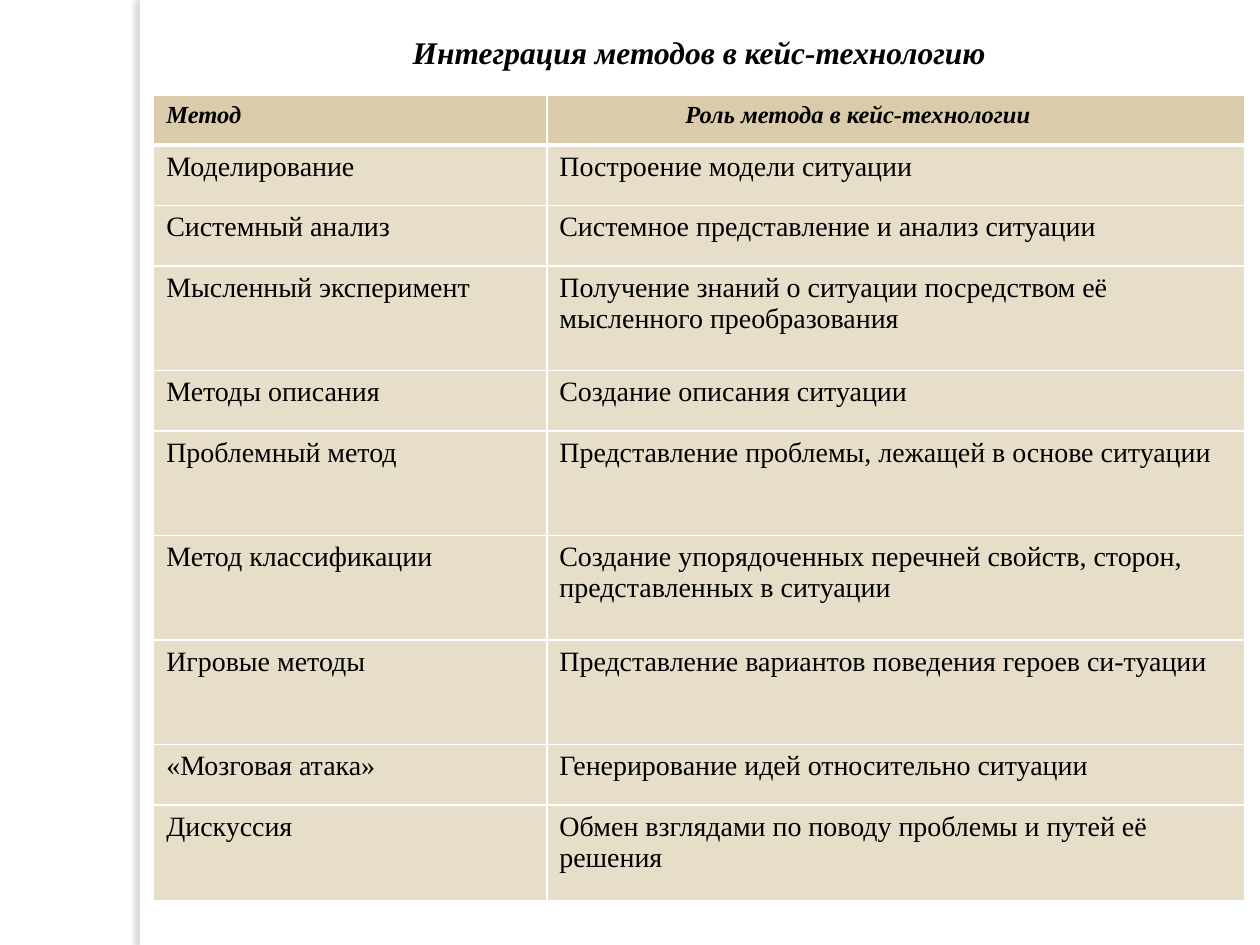
from dataclasses import dataclass

import pptx
import pptx.dml.color
import pptx.enum.shapes
import pptx.enum.text
import pptx.oxml
import pptx.oxml.ns
import pptx.util
from pptx.util import Inches


@dataclass(frozen=True)
class Theme:
    font: str = "Times New Roman"
    text: str = "000000"
    paper: str = "FFFFFF"
    header: str = "DACCAB"
    body: str = "E7DEC9"
    shadow: str = "736F63"
    title_size: int = 18
    header_size: int = 14
    body_size: int = 16
    line: int = 1
    header_line: int = 3


THEME = Theme()
TITLE = "Интеграция методов в кейс-технологию"
HEADER = ("Метод", "Роль метода в кейс-технологии")
SHORT, TALL, LAST = 0.48, 0.83, 0.76
METHODS = [
    (SHORT, "Моделирование", "Построение модели ситуации"),
    (SHORT, "Системный анализ", "Системное представление и анализ ситуации"),
    (TALL, "Мысленный эксперимент",
     "Получение знаний о ситуации посредством её мысленного преобразования"),
    (SHORT, "Методы описания", "Создание описания ситуации"),
    (TALL, "Проблемный метод", "Представление проблемы, лежащей в основе ситуации"),
    (TALL, "Метод классификации",
     "Создание упорядоченных перечней свойств, сторон, представленных в ситуации"),
    (TALL, "Игровые методы", "Представление вариантов поведения героев си-туации"),
    (SHORT, "«Мозговая атака»", "Генерирование идей относительно ситуации"),
    (LAST, "Дискуссия", "Обмен взглядами по поводу проблемы и путей её решения"),
]


def color(value):
    return pptx.dml.color.RGBColor.from_string(value)


def paint(target, value):
    target.fill.solid()
    target.fill.fore_color.rgb = color(value)


def write(frame, text, size, strong):
    """Set one paragraph; strong text is bold and italic."""
    frame.text = text
    para = frame.paragraphs[0]
    font = para.runs[0].font
    font.name = THEME.font
    font.size = pptx.util.Pt(size)
    font.bold = font.italic = strong
    font.color.rgb = color(THEME.text)
    return para


def add_strip(slide, left, top, width, height):
    """Page edge with a soft shadow falling to the left."""
    strip = slide.shapes.add_shape(
        pptx.enum.shapes.MSO_SHAPE.RECTANGLE, left, top, width, height)
    paint(strip, THEME.paper)
    strip.line.fill.background()
    strip.shadow.inherit = False
    effects = strip.element.spPr.find(pptx.oxml.ns.qn("a:effectLst"))
    reach = pptx.util.Pt(3)
    effects.append(pptx.oxml.parse_xml(
        f'<a:outerShdw {pptx.oxml.ns.nsdecls("a")} blurRad="{reach}" dist="{reach}" '
        f'dir="{180 * 60000}" algn="tl" rotWithShape="0">'
        f'<a:srgbClr val="{THEME.shadow}"><a:alpha val="25000"/></a:srgbClr>'
        f'</a:outerShdw>'))


def add_title(slide, left, top, width, height):
    box = slide.shapes.add_textbox(left, top, width, height)
    box.text_frame.word_wrap = True
    box.text_frame.auto_size = pptx.enum.text.MSO_AUTO_SIZE.SHAPE_TO_FIT_TEXT
    para = write(box.text_frame, TITLE, THEME.title_size, True)
    para.alignment = pptx.enum.text.PP_ALIGN.CENTER


def set_borders(cell, bottom):
    properties = cell._tc.get_or_add_tcPr()
    widths = {"L": THEME.line, "R": THEME.line, "T": THEME.line, "B": bottom}
    for side, width in widths.items():
        properties.append(pptx.oxml.parse_xml(
            f'<a:ln{side} {pptx.oxml.ns.nsdecls("a")} w="{pptx.util.Pt(width)}">'
            f'<a:solidFill><a:srgbClr val="{THEME.paper}"/></a:solidFill></a:ln{side}>'))


def add_methods(slide, left, top, width, height):
    rows = [(0.39, *HEADER), *METHODS]
    table = slide.shapes.add_table(len(rows), 2, left, top, width, height).table
    table.columns[0].width = Inches(3.12)
    table.columns[1].width = width - Inches(3.12)
    for index, (row_height, *texts) in enumerate(rows):
        table.rows[index].height = Inches(row_height)
        is_header = index == 0
        for cell, text in zip(table.rows[index].cells, texts):
            set_borders(cell, THEME.header_line if is_header else THEME.line)
            paint(cell, THEME.header if is_header else THEME.body)
            size = THEME.header_size if is_header else THEME.body_size
            write(cell.text_frame, text, size, is_header)
    table.cell(0, 1).margin_left = Inches(1.1)


def main():
    deck = pptx.Presentation()
    deck.slide_width, deck.slide_height = Inches(10), Inches(7.5)
    slide = deck.slides.add_slide(deck.slide_layouts[6])
    paint(slide.background, THEME.paper)
    add_strip(slide, Inches(1.11), 0, Inches(0.08), deck.slide_height)
    add_methods(slide, Inches(1.22), Inches(0.76), Inches(8.66), Inches(6.36))
    add_title(slide, Inches(1.3), Inches(0.21), Inches(8.5), Inches(0.4))
    deck.save("out.pptx")


if __name__ == "__main__":
    main()
